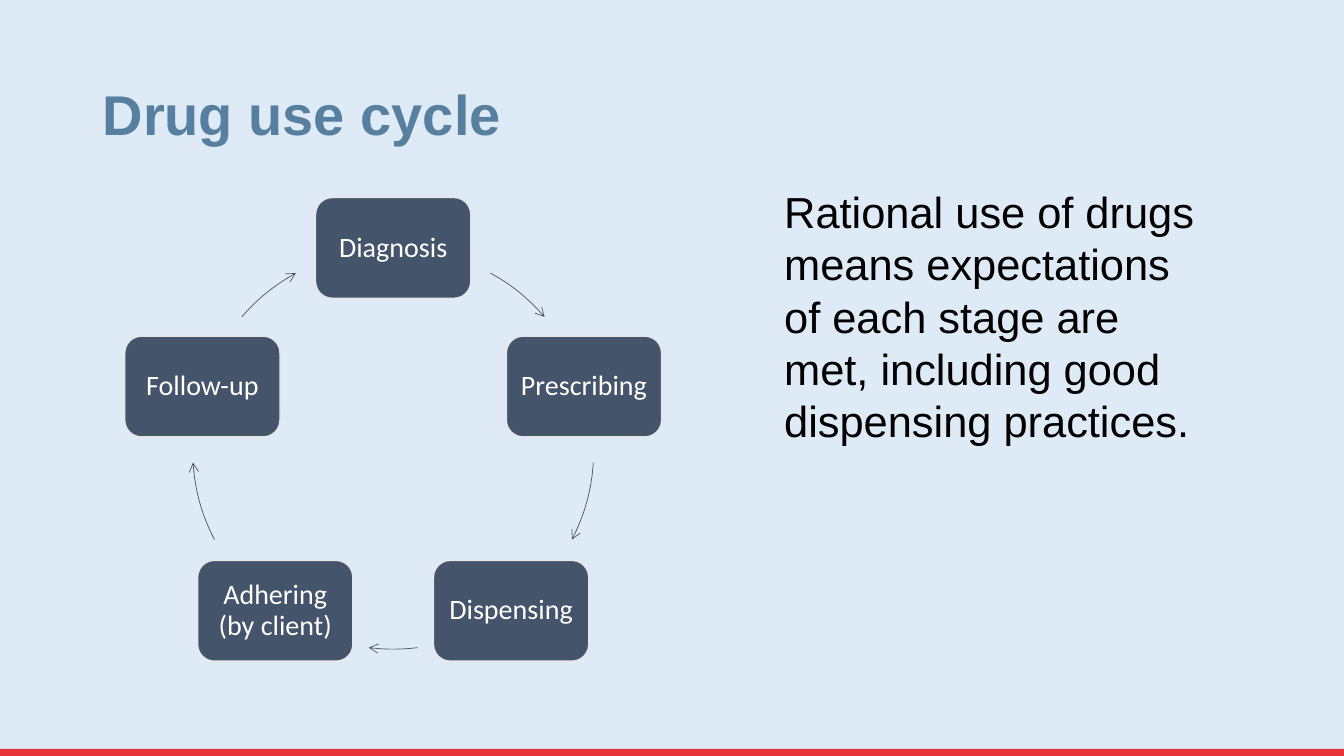
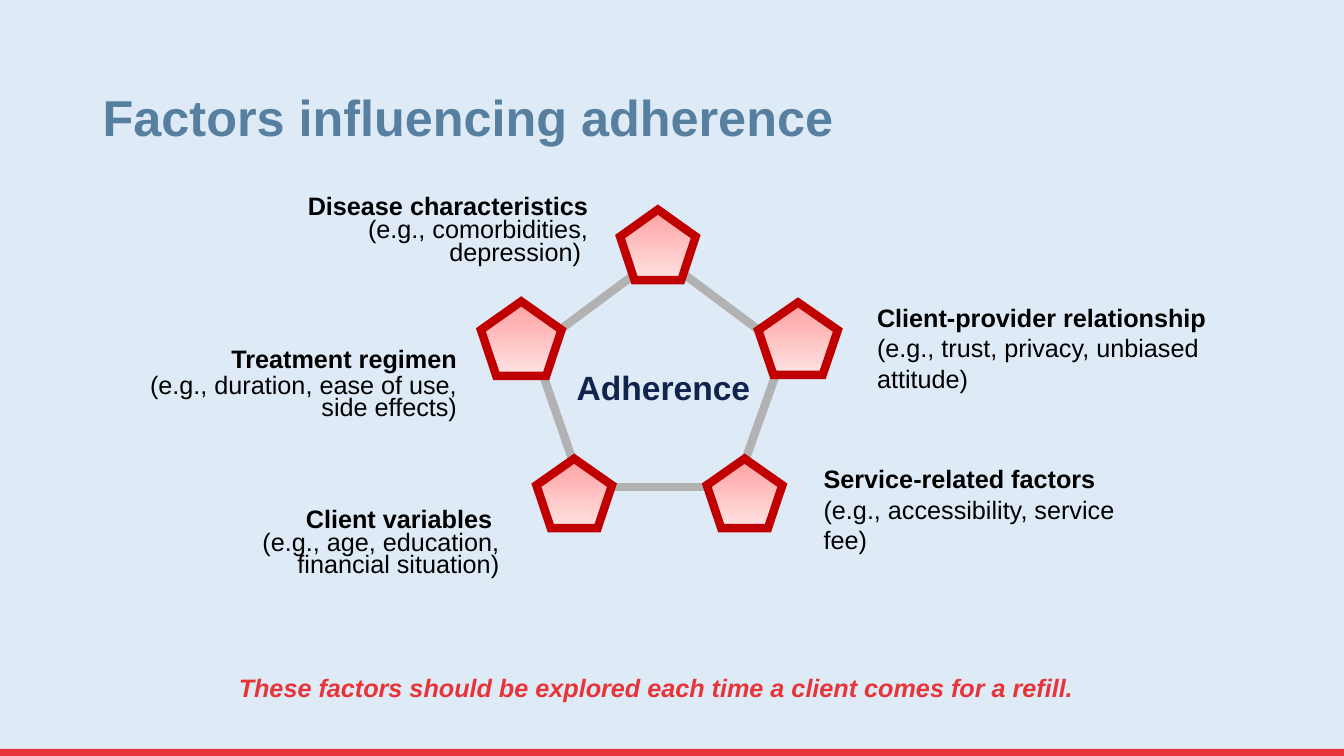
"""Builds two slides on drug use and adherence."""
from math import cos, radians, sin

from lxml.etree import SubElement
from pptx import Presentation
from pptx.dml.color import RGBColor
from pptx.enum.shapes import MSO_CONNECTOR as Connector, MSO_SHAPE as Shape
from pptx.enum.text import MSO_ANCHOR as Anchor, PP_ALIGN as Align
from pptx.oxml.ns import qn
from pptx.util import Emu, Pt

PX = 9144
WIDTH, HEIGHT = 1333, 750
SKY, RED, STEEL, SLATE, NAVY = "DEEBF7", "E73439", "577F9F", "44546A", "10244D"
BLACK, WHITE, PALE, GREY, CRIMSON = "000000", "FFFFFF", "E7E6E6", "B2B2B2", "C00000"
PINK, BLUSH = "FFA0A0", "FFE3E3"

STAGES = ["Diagnosis", "Prescribing", "Dispensing", "Adhering (by client)", "Follow-up"]
CYCLE_CENTER, CYCLE_RADIUS = (390, 445), 199
STAGE_SIZE = (154, 100)
STAGE_MARGIN = 4
ARROW_ANGLES = [(29, 49), (94, 117), (173, 187), (243, 266), (311, 331)]
MESSAGE = ("Rational use of drugs means expectations of each stage are met, "
           "including good dispensing practices.")

LINKS = [
    (557, 326, 631, 271),
    (752, 327, 677, 271),
    (700, 483, 606, 483),
    (769, 373, 739, 457),
    (539, 373, 568, 457),
]
PENTAGONS = [
    (532, 455, 75, 69),
    (477, 299, 80, 74),
    (752, 300, 79, 72),
    (701, 455, 75, 69),
    (615, 208, 75, 70),
]
LEFT = {"align": Align.RIGHT, "spacing": 0.75}
RIGHT = {"align": Align.LEFT, "spacing": 1}
FACTORS = [
    ("Disease characteristics", "(e.g., comorbidities, depression) ",
     (239, 193, 354, 74), LEFT, 0),
    ("Treatment regimen", "(e.g., duration, ease of use, side effects)",
     (109, 341, 354, 84), LEFT, 2),
    ("Client variables ", "(e.g., age, education, financial situation)",
     (168, 498, 337, 84), LEFT, 0),
    ("Service-related factors", "(e.g., accessibility, service fee)",
     (807, 467, 351, 76), RIGHT, 0),
    ("Client-provider relationship", "(e.g., trust, privacy, unbiased attitude)",
     (860, 293, 351, 104), RIGHT, 0),
]
REMINDER = "These factors should be explored each time a client comes for a refill."


def color(value):
    return RGBColor.from_string(value)


def emu(*lengths):
    return [Emu(round(length * PX)) for length in lengths]


def add_block(page, kind, area, fill=None, line=None, weight=1):
    block = page.shapes.add_shape(kind, *emu(*area))
    block.shadow.inherit = False
    if fill:
        block.fill.solid()
        block.fill.fore_color.rgb = color(fill)
    else:
        block.fill.background()
    if line:
        block.line.color.rgb = color(line)
        block.line.width = Pt(weight)
    else:
        block.line.fill.background()
    return block


def style(para, size, ink, font="Arial", bold=False, italic=False,
          align=Align.LEFT, spacing=1):
    para.alignment = align
    para.line_spacing = spacing
    para.font.size = Pt(size)
    para.font.name = font
    para.font.bold = bold
    para.font.italic = italic
    para.font.color.rgb = color(ink)


def add_text(page, text, area, size, ink, anchor=Anchor.TOP, **looks):
    frame = page.shapes.add_textbox(*emu(*area)).text_frame
    frame.word_wrap = True
    frame.vertical_anchor = anchor
    frame.text = text
    style(frame.paragraphs[0], size, ink, **looks)
    return frame


def add_page(deck, title, size):
    page = deck.slides.add_slide(deck.slide_layouts[6])
    add_block(page, Shape.RECTANGLE, (0, 743, WIDTH, HEIGHT - 743), RED)
    add_text(page, title, (92, 64, 1150, 87), size, STEEL, Anchor.BOTTOM,
             bold=True, spacing=0.9)
    return page


def add_stage(page, name, angle):
    width, height = STAGE_SIZE
    left = CYCLE_CENTER[0] + CYCLE_RADIUS * sin(radians(angle)) - width / 2
    top = CYCLE_CENTER[1] - CYCLE_RADIUS * cos(radians(angle)) - height / 2
    box = add_block(page, Shape.ROUNDED_RECTANGLE, (left, top, width, height), SLATE, PALE)
    frame = box.text_frame
    frame.word_wrap = True
    frame.vertical_anchor = Anchor.MIDDLE
    frame.margin_left, frame.margin_right = emu(STAGE_MARGIN, STAGE_MARGIN)
    frame.text = name
    style(frame.paragraphs[0], 20, WHITE, "Calibri", align=Align.CENTER, spacing=0.9)


def add_cycle_arrow(page, start, end):
    area = [middle - CYCLE_RADIUS for middle in CYCLE_CENTER] + [2 * CYCLE_RADIUS] * 2
    arc = add_block(page, Shape.ARC, area, line=SLATE, weight=0.5)
    for index, angle in enumerate((start, end)):
        arc.adjustments[index] = (angle - 90) % 360 * 0.6
    SubElement(arc.line._get_or_add_ln(), qn("a:tailEnd"), type="arrow")


def add_link(page, ends):
    link = page.shapes.add_connector(Connector.STRAIGHT, *emu(*ends))
    link.line.color.rgb = color(GREY)
    link.line.width = Pt(6)
    SubElement(link._element.spPr, qn("a:effectLst"))


def add_pentagon(page, area):
    pentagon = add_block(page, Shape.REGULAR_PENTAGON, area, PINK, CRIMSON, 6)
    pentagon.fill.gradient()
    pentagon.fill.gradient_angle = 270
    for stop, shade in zip(pentagon.fill.gradient_stops, (PINK, BLUSH)):
        stop.color.rgb = color(shade)
    SubElement(pentagon.line._get_or_add_ln(), qn("a:miter"), lim="800000")


def add_factor(page, name, examples, area, side, gap):
    frame = add_text(page, name, area, 18, BLACK, Anchor.MIDDLE, bold=True, **side)
    detail = frame.add_paragraph()
    detail.text = examples
    detail.space_before = Pt(gap)
    style(detail, 18, BLACK, **side)


def build_cycle(deck):
    page = add_page(deck, "Drug use cycle", 40)
    add_text(page, MESSAGE, (768, 179, 446, 539), 31, BLACK)
    for index, name in enumerate(STAGES):
        add_stage(page, name, index * 360 / len(STAGES))
        add_cycle_arrow(page, *ARROW_ANGLES[index])


def build_factors(deck):
    page = add_page(deck, "Factors influencing adherence", 36)
    for ends in LINKS:
        add_link(page, ends)
    for area in PENTAGONS:
        add_pentagon(page, area)
    for factor in FACTORS:
        add_factor(page, *factor)
    add_text(page, "Adherence", (560, 359, 196, 50), 24, NAVY, bold=True, align=Align.CENTER)
    add_text(page, REMINDER, (227, 662, 863, 40), 18, RED, bold=True, italic=True)


def main():
    deck = Presentation()
    deck.slide_width, deck.slide_height = emu(WIDTH, HEIGHT)
    backdrop = deck.slide_master.background.fill
    backdrop.solid()
    backdrop.fore_color.rgb = color(SKY)
    build_cycle(deck)
    build_factors(deck)
    deck.save("out.pptx")


if __name__ == "__main__":
    main()
